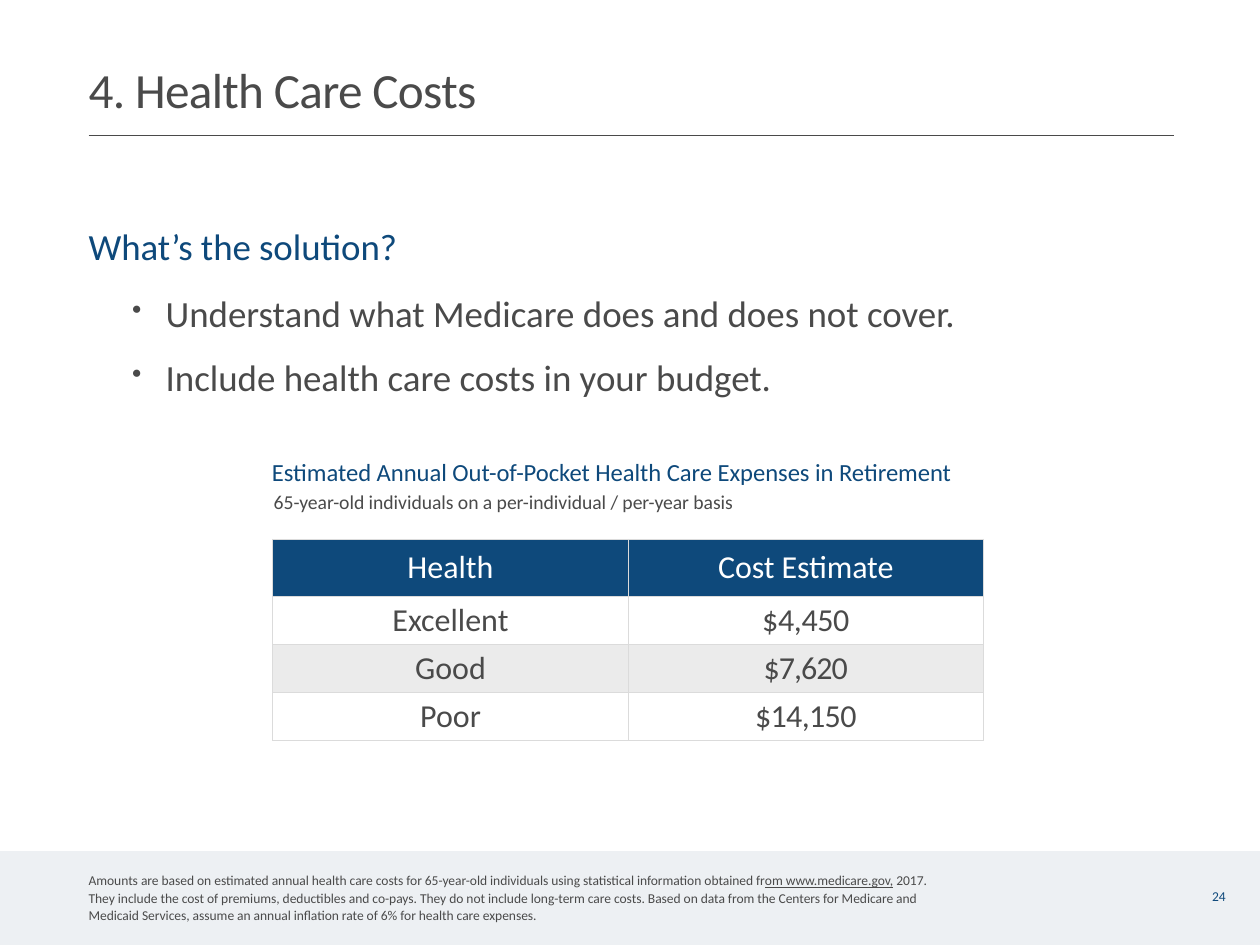
"""Build the health care costs slide with its expense table."""
from lxml import etree
from pptx import Presentation
from pptx import util as u
from pptx.dml.color import RGBColor
from pptx.enum import shapes, text
from pptx.oxml import ns

NAVY = RGBColor(0x0E, 0x49, 0x7B)
GRAY = RGBColor(0x4A, 0x4A, 0x4A)
WHITE = RGBColor(0xFF, 0xFF, 0xFF)
BAND = RGBColor(0xEB, 0xEB, 0xEB)
FOOTER = RGBColor(0xED, 0xF0, 0xF3)
BORDER = RGBColor(0xDB, 0xDB, 0xDB)
FONT = "Calibri"
WIDTH, HEIGHT = 14.22, 10.67
LEFT = 0.99

TITLE = "4. Health Care Costs"
QUESTION = "What’s the solution?"
BULLETS = [
    ("Understand what Medicare does and does not cover.", 19),
    ("Include health care costs in your budget.", 16),
]
TABLE_TITLE = "Estimated Annual Out-of-Pocket Health Care Expenses in Retirement"
TABLE_SUBTITLE = "65-year-old individuals on a per-individual / per-year basis"
COSTS = [
    ("Health", "Cost Estimate"),
    ("Excellent", "$4,450"),
    ("Good", "$7,620"),
    ("Poor", "$14,150"),
]
VALUE_TRACKING = [-0.1, -0.3, -0.8, -0.5]
ROW_HEIGHTS = [0.65, 0.54, 0.54, 0.54]
FOOTNOTE = [
    ("Amounts are based on estimated annual health care costs for 65-year-old "
     "individuals using statistical information obtained fr", False),
    ("om www.medicare.gov,", True),
    (" 2017. They include the cost of premiums, deductibles and co-pays. They do "
     "not include long-term care costs. Based on data from the Centers for Medicare "
     "and Medicaid Services, assume an annual inflation rate of 6% for health care "
     "expenses.", False),
]
PAGE = "24"


def add_child(parent, tag, **attributes):
    return etree.SubElement(parent, ns.qn(tag), attributes)


def set_margins(target, top):
    target.margin_left = target.margin_right = target.margin_bottom = 0
    target.margin_top = u.Inches(top)


def add_text_box(slide, left, top, width, height, inset=0.01):
    frame = slide.shapes.add_textbox(*map(u.Inches, (left, top, width, height))).text_frame
    frame.word_wrap = True
    set_margins(frame, inset)
    return frame


def write(paragraph, content, size, color, before=1, tracking=0, indent=0.01):
    runs = [(content, False)] if isinstance(content, str) else content
    for words, underlined in runs:
        run = paragraph.add_run()
        run.text = words
        if underlined:
            run.font.underline = True
        if tracking:
            run._r.get_or_add_rPr().set("spc", str(round(tracking * 100)))
    properties = paragraph._p.get_or_add_pPr()
    properties.set("marL", str(u.Inches(indent)))
    paragraph.space_before = u.Pt(before)
    paragraph.font.name = FONT
    paragraph.font.size = u.Pt(size)
    paragraph.font.color.rgb = color


def add_bullet(paragraph):
    properties = paragraph._p.get_or_add_pPr()
    properties.set("indent", str(u.Inches(-0.38)))
    add_child(properties, "a:buSzPct", val="75000")
    add_child(properties, "a:buChar", char="•")


def add_borders(cell):
    properties = cell._tc.get_or_add_tcPr()
    for side in ("a:lnL", "a:lnR", "a:lnT", "a:lnB"):
        line = add_child(properties, side, w=str(u.Pt(1)))
        add_child(add_child(line, "a:solidFill"), "a:srgbClr", val=str(BORDER))


def add_footer_band(slide):
    top = 9.61
    band = slide.shapes.add_shape(
        shapes.MSO_SHAPE.RECTANGLE, 0, u.Inches(top), u.Inches(WIDTH), u.Inches(HEIGHT - top))
    band.shadow.inherit = False
    band.fill.solid()
    band.fill.fore_color.rgb = FOOTER
    band.line.fill.background()


def add_title_rule(slide):
    rule = slide.shapes.add_connector(
        shapes.MSO_CONNECTOR.STRAIGHT, *map(u.Inches, (1, 1.53, 13.25, 1.53)))
    rule.line.color.rgb = GRAY
    rule.line.width = u.Pt(1)
    add_child(rule._element.spPr, "a:effectLst")


def add_cost_table(slide):
    table = slide.shapes.add_table(
        len(COSTS), 2, *map(u.Inches, (3.08, 6.09, 8.02, sum(ROW_HEIGHTS)))).table
    table.first_row = table.horz_banding = False
    for column in table.columns:
        column.width = u.Inches(4.01)
    for row, labels in enumerate(COSTS):
        table.rows[row].height = u.Inches(ROW_HEIGHTS[row])
        header = row == 0
        for column, label in enumerate(labels):
            cell = table.cell(row, column)
            add_borders(cell)
            cell.fill.solid()
            cell.fill.fore_color.rgb = NAVY if header else WHITE if row % 2 else BAND
            set_margins(cell, 0.1 if header else 0.05)
            paragraph = cell.text_frame.paragraphs[0]
            write(paragraph, label, 26, WHITE if header else GRAY, 7.5 if header else 3.5,
                  VALUE_TRACKING[row] if column else 0, 0)
            paragraph.alignment = text.PP_ALIGN.CENTER


def main():
    presentation = Presentation()
    presentation.slide_width = u.Inches(WIDTH)
    presentation.slide_height = u.Inches(HEIGHT)
    slide = presentation.slides.add_slide(presentation.slide_layouts[6])

    add_footer_band(slide)
    title = add_text_box(slide, LEFT, 0.66, 6, 0.69)
    write(title.paragraphs[0], TITLE, 40, GRAY, tracking=-0.55)
    add_title_rule(slide)

    body = add_text_box(slide, LEFT, 2.24, 10.54, 2.29, 0.28)
    write(body.paragraphs[0], QUESTION, 30, NAVY, 19.9, -0.07)
    for bullet, before in BULLETS:
        paragraph = body.add_paragraph()
        add_bullet(paragraph)
        write(paragraph, bullet, 30, GRAY, before, indent=0.88)

    caption = add_text_box(slide, 3.06, 5.1, 7.84, 0.72, 0.06)
    write(caption.paragraphs[0], TABLE_TITLE, 20, NAVY, 4.5, -0.05)
    write(caption.add_paragraph(), TABLE_SUBTITLE, 16, GRAY, 2.8, -0.04, 0.03)
    add_cost_table(slide)

    footnote = add_text_box(slide, LEFT, 9.83, 9.62, 0.59).paragraphs[0]
    write(footnote, FOOTNOTE, 11, GRAY, tracking=-0.05)
    footnote.line_spacing = 1.06
    page = add_text_box(slide, 13.67, 10.02, 0.28, 0.2)
    write(page.paragraphs[0], PAGE, 11, NAVY)

    presentation.save("out.pptx")


if __name__ == "__main__":
    main()
